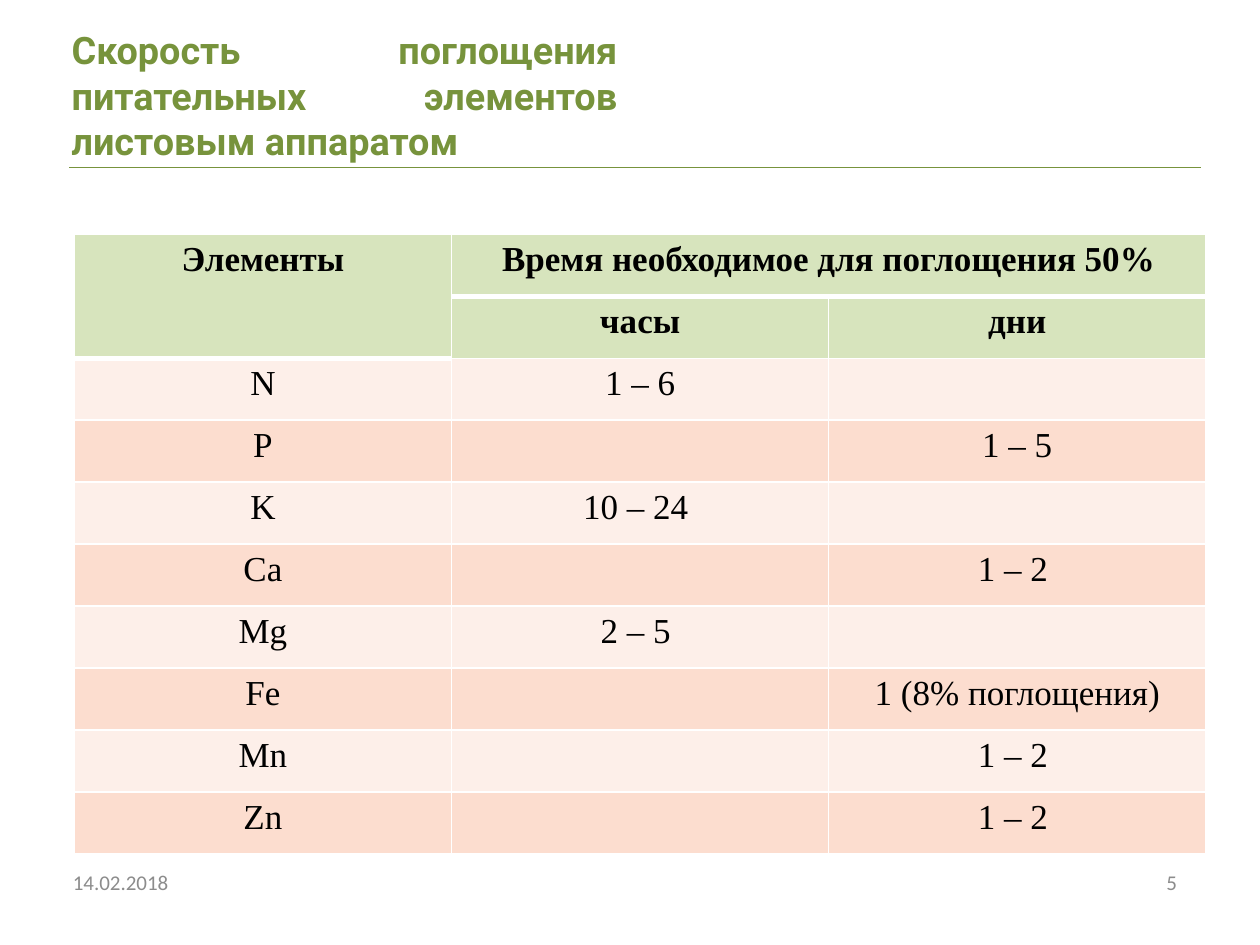
"""Slide with a table of nutrient absorption rates through leaves."""
import pptx
import pptx.dml.color
import pptx.enum.shapes
import pptx.enum.text
import pptx.oxml.ns
import pptx.util
from lxml import etree

Inches, Pt = pptx.util.Inches, pptx.util.Pt
RGBColor = pptx.dml.color.RGBColor
PP_ALIGN = pptx.enum.text.PP_ALIGN
ANCHOR = pptx.enum.text.MSO_ANCHOR
qn = pptx.oxml.ns.qn

GREEN = RGBColor(0x77, 0x93, 0x3C)
GREY = RGBColor(0x8C, 0x8C, 0x8C)
BLACK = RGBColor(0x00, 0x00, 0x00)
WHITE = RGBColor(0xFF, 0xFF, 0xFF)
HEADER_FILL = RGBColor(0xD7, 0xE4, 0xBD)
ROW_FILLS = (RGBColor(0xFD, 0xEF, 0xE9), RGBColor(0xFC, 0xDD, 0xCF))

HEADERS = [
    ("Элементы", "Время необходимое для поглощения 50%", ""),
    ("", "часы", "дни"),
]
RATES = [
    ("N", "1 – 6", ""),
    ("P", "", "1 – 5"),
    ("K", "10 – 24 ", ""),
    ("Ca", "", "1 – 2 "),
    ("Mg", "2 – 5 ", ""),
    ("Fe", "", "1 (8% поглощения)"),
    ("Mn", "", "1 – 2 "),
    ("Zn", "", "1 – 2 "),
]
THICK_EDGES = {(0, 0, "B"), (1, 0, "B"), (2, 0, "T"),
               (0, 1, "B"), (0, 2, "B"), (1, 1, "T"), (1, 2, "T")}


def write(frame, text, font_name, size, color, align, bold=False):
    paragraph = frame.paragraphs[0]
    paragraph.alignment = align
    if text:
        run = paragraph.add_run()
        run.text = text
        run.font.name = font_name
        run.font.size = Pt(size)
        run.font.bold = bold
        run.font.color.rgb = color


def add_border(cell, edge, width):
    line = etree.SubElement(cell._tc.get_or_add_tcPr(), qn(f"a:ln{edge}"), w=str(Pt(width)))
    fill = etree.SubElement(line, qn("a:solidFill"))
    etree.SubElement(fill, qn("a:srgbClr"), val=str(WHITE))


prs = pptx.Presentation()
prs.slide_width, prs.slide_height = Inches(10), Inches(7.5)
slide = prs.slides.add_slide(prs.slide_layouts[6])

rule = slide.shapes.add_connector(
    pptx.enum.shapes.MSO_CONNECTOR.STRAIGHT,
    Inches(0.55), Inches(1.33), Inches(9.53), Inches(1.33))
rule.line.color.rgb = GREEN
rule.line.width = Pt(0.75)
etree.SubElement(rule._element.spPr, qn("a:effectLst"))

for left, top, width, height, text, font_name, size, color, align, bold in [
    (0.48, 6.8, 2.33, 0.4, "14.02.2018", "Calibri", 12, GREY, PP_ALIGN.LEFT, False),
    (7.11, 6.8, 2.33, 0.4, "5", "Calibri", 12, GREY, PP_ALIGN.RIGHT, False),
    (0.47, 0.13, 4.53, 1.25, "Скорость поглощения питательных элементов листовым аппаратом",
     "Roboto", 21.6, GREEN, PP_ALIGN.JUSTIFY, True),
]:
    label = slide.shapes.add_textbox(Inches(left), Inches(top), Inches(width), Inches(height))
    label.text_frame.word_wrap = True
    label.text_frame.vertical_anchor = ANCHOR.MIDDLE
    write(label.text_frame, text, font_name, size, color, align, bold)

rows = HEADERS + RATES
rates_table = slide.shapes.add_table(
    len(rows), 3, Inches(0.59), Inches(1.86), Inches(8.98), Inches(4.92)).table

for r, row in enumerate(rows):
    is_header = r < len(HEADERS)
    for c, text in enumerate(row):
        cell = rates_table.cell(r, c)
        for edge in "LRTB":
            add_border(cell, edge, 3 if (r, c, edge) in THICK_EDGES else 1)
        cell.fill.solid()
        cell.fill.fore_color.rgb = HEADER_FILL if is_header else ROW_FILLS[r % 2]
        write(cell.text_frame, text, "Times New Roman", 20, BLACK, PP_ALIGN.CENTER, is_header)

rates_table.cell(0, 0).merge(rates_table.cell(1, 0))
rates_table.cell(0, 1).merge(rates_table.cell(0, 2))

prs.save("out.pptx")
